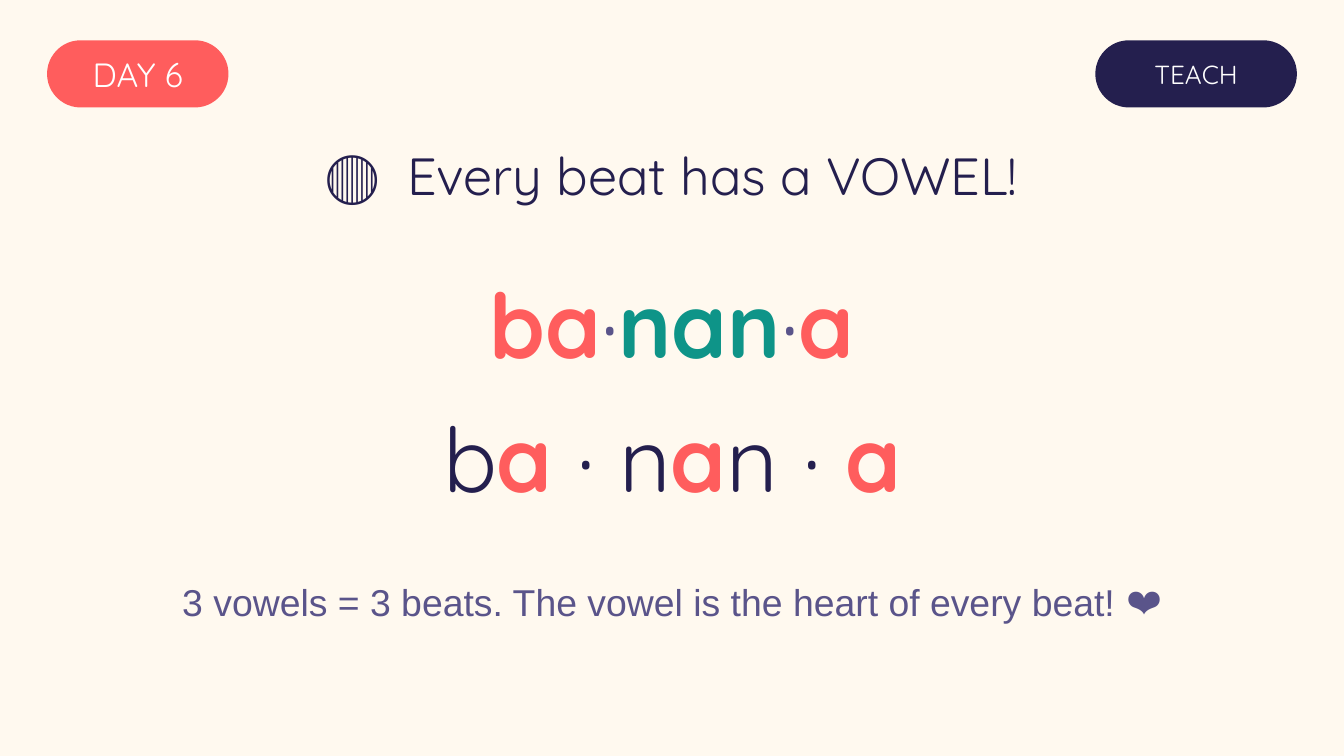
from pptx import Presentation
from pptx.dml.color import RGBColor
from pptx.enum.shapes import MSO_SHAPE
from pptx.enum.text import MSO_ANCHOR, MSO_AUTO_SIZE, PP_ALIGN
from pptx.util import Inches, Pt

ROUND = MSO_SHAPE.ROUNDED_RECTANGLE
MIDDLE = MSO_ANCHOR.MIDDLE
FIXED = MSO_AUTO_SIZE.NONE
CENTER = PP_ALIGN.CENTER
HEAD, BODY = "Quicksand", "Arial"
WIDE = 10
HIGH = WIDE * 9 / 16
COLORS = {
    "cream": "FFF9EF",
    "coral": "FF5D5D",
    "navy": "241F4E",
    "teal": "0E9488",
    "plum": "5A548A",
    "white": "FFFFFF",
}


def color(name):
    """Return the named colour."""
    return RGBColor.from_string(COLORS[name])


def write(shape, runs, size, font=HEAD):
    """Fill a shape with one centred line of (text, colour, bold) runs."""
    frame = shape.text_frame
    frame.word_wrap = True
    frame.auto_size = FIXED
    frame.vertical_anchor = MIDDLE
    line = frame.paragraphs[0]
    line.alignment = CENTER
    for text, tint, bold in runs:
        run = line.add_run()
        run.text = text
        run.font.name = font
        run.font.size = Pt(size)
        run.font.bold = bold
        run.font.color.rgb = color(tint)
    return line


def add_pill(slide, box, text, fill, size):
    """Draw a rounded label with its text."""
    pill = slide.shapes.add_shape(ROUND, *map(Inches, box))
    pill.adjustments[0] = 0.5
    pill.shadow.inherit = False
    pill.fill.solid()
    pill.fill.fore_color.rgb = color(fill)
    pill.line.fill.background()
    frame = pill.text_frame
    frame.margin_left = frame.margin_right = 0
    frame.margin_top = frame.margin_bottom = 0
    write(pill, [(text, "white", False)], size)


def add_title(slide, box, icon, text):
    """Place the title, with a wide gap after its icon."""
    title = slide.shapes.title
    title.left, title.top, title.width, title.height = map(Inches, box)
    parts = [(part, "navy", False) for part in (icon, " ", text)]
    line = write(title, parts, 28)
    gap = line.runs[1].font
    gap._element.set("spc", "800")


def add_line(slide, box, runs, size, font=HEAD):
    """Place a centred line of text."""
    write(slide.shapes.add_textbox(*map(Inches, box)), runs, size, font)


def main():
    """Build and save the slide."""
    deck = Presentation()
    deck.slide_width, deck.slide_height = Inches(WIDE), Inches(HIGH)
    slide = deck.slides.add_slide(deck.slide_layouts[5])
    back = slide.background.fill
    back.solid()
    back.fore_color.rgb = color("cream")

    add_pill(slide, (0.35, 0.3, 1.35, 0.5), "DAY 6", "coral", 18)
    add_pill(slide, (8.15, 0.3, 1.5, 0.5), "TEACH", "navy", 14)
    add_title(slide, (0, 0.95, WIDE, 0.7), "🔴", "Every beat has a VOWEL!")

    dot = ("·", "plum", False)
    beats = [("ba", "coral", True), dot, ("nan", "teal", True), dot,
             ("a", "coral", True)]
    add_line(slide, (0, 2, WIDE, 0.8), beats, 48)

    vowel = ("a", "coral", True)
    vowels = [("b", "navy", False), vowel, (" · n", "navy", False), vowel,
              ("n · ", "navy", False), vowel]
    add_line(slide, (0, 3, WIDE, 0.8), vowels, 48)

    note = "3 vowels = 3 beats. The vowel is the heart of every beat! ❤️"
    add_line(slide, (0, 4.2, WIDE, 0.55), [(note, "plum", False)], 20, BODY)
    deck.save("out.pptx")


if __name__ == "__main__":
    main()
